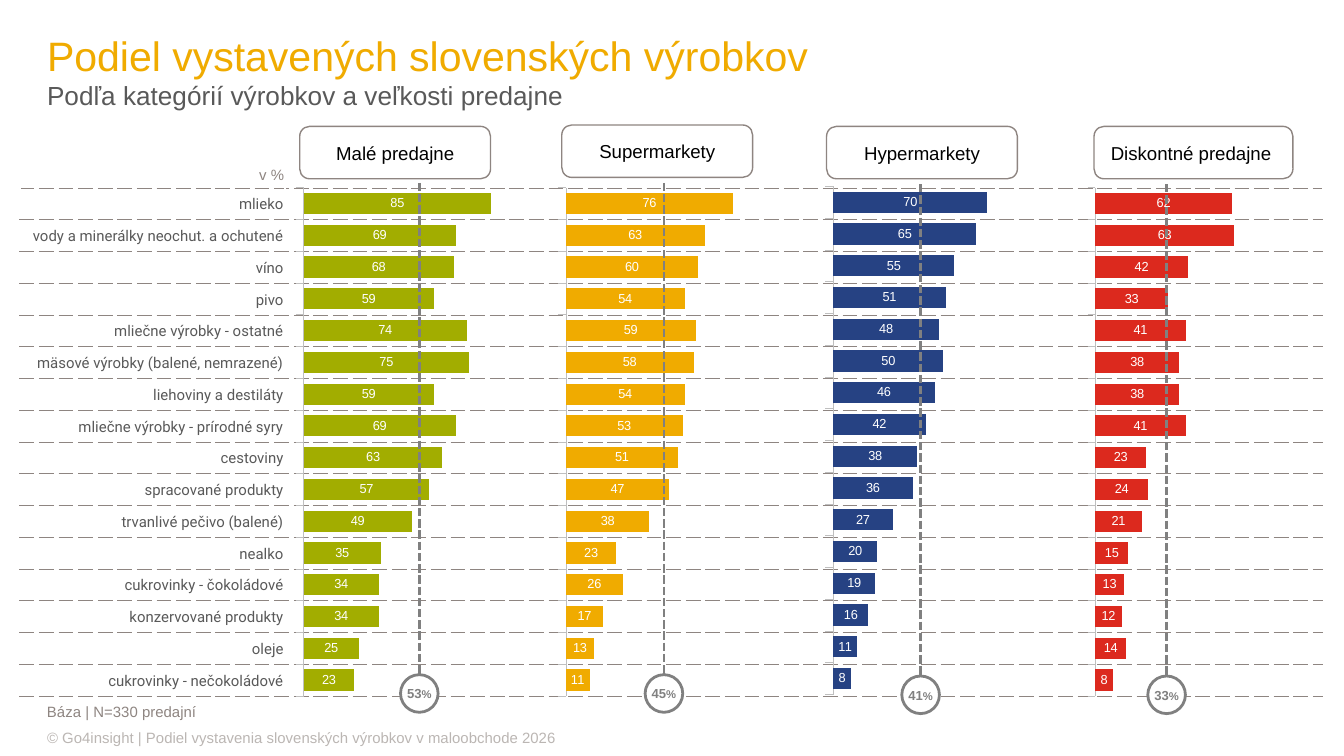
"""Build a slide on the share of Slovak goods on show, by type and shop size."""
import collections

import lxml.etree
import pptx
import pptx.chart.data
import pptx.dml.color
import pptx.enum.chart
import pptx.enum.dml
import pptx.enum.shapes
import pptx.enum.text
import pptx.oxml
import pptx.oxml.ns
import pptx.util

Inches = pptx.util.Inches
Pt = pptx.util.Pt
RGBColor = pptx.dml.color.RGBColor
Align = pptx.enum.text.PP_ALIGN
Anchor = pptx.enum.text.MSO_ANCHOR
Shape = pptx.enum.shapes.MSO_SHAPE
qn = pptx.oxml.ns.qn

WHITE = RGBColor(0xFF, 0xFF, 0xFF)
BLACK = RGBColor(0, 0, 0)
GOLD = RGBColor(0xF0, 0xAB, 0x00)
GREEN = RGBColor(0xA2, 0xAD, 0x00)
BLUE = RGBColor(0x26, 0x42, 0x83)
RED = RGBColor(0xDC, 0x29, 0x1E)
DARK = RGBColor(0x59, 0x59, 0x59)
GRAY = RGBColor(0x80, 0x80, 0x80)
TAUPE = RGBColor(0x8E, 0x85, 0x81)
PALE = RGBColor(0xBB, 0xB6, 0xB3)
SILVER = RGBColor(0xBF, 0xBF, 0xBF)

GOODS = [
    "mlieko", "vody a minerálky neochut. a ochutené", "víno", "pivo",
    "mliečne výrobky - ostatné", "mäsové výrobky (balené, nemrazené)",
    "liehoviny a destiláty", "mliečne výrobky - prírodné syry", "cestoviny",
    "spracované produkty", "trvanlivé pečivo (balené)", "nealko",
    "cukrovinky - čokoládové", "konzervované produkty", "oleje",
    "cukrovinky - nečokoládové",
]

Shop = collections.namedtuple(
    "Shop", "name color head_x head_y head_w bar_x bar_y mean mean_x mean_y vals")
SHOPS = [
    Shop("Malé predajne", GREEN, 2.23, 0.94, 1.42, 2.2, 1.32, 53, 3.12, 1.36,
         [85, 69, 68, 59, 74, 75, 59, 69, 63, 57, 49, 35, 34, 34, 25, 23]),
    Shop("Supermarkety", GOLD, 4.18, 0.93, 1.42, 4.15, 1.32, 45, 4.94, 1.36,
         [76, 63, 60, 54, 59, 58, 54, 53, 51, 47, 38, 23, 26, 17, 13, 11]),
    Shop("Hypermarkety", BLUE, 6.15, 0.94, 1.42, 6.14, 1.31, 41, 6.85, 1.37,
         [70, 65, 55, 51, 48, 50, 46, 42, 38, 36, 27, 20, 19, 16, 11, 8]),
    Shop("Diskontné predajne ", RED, 8.14, 0.94, 1.48, 8.09, 1.32, 33, 8.68, 1.37,
         [62, 63, 42, 33, 41, 38, 38, 41, 23, 24, 21, 15, 13, 12, 14, 8]),
]


def write(frame, text, size=8, color=DARK, font="Arial", bold=False,
          align=Align.LEFT, anchor=Anchor.MIDDLE, pad=(0, 0, 0, 0), wrap=True):
    """Set text and its format in a frame, and return the paragraph."""
    frame.word_wrap = wrap
    frame.vertical_anchor = anchor
    (frame.margin_left, frame.margin_top,
     frame.margin_right, frame.margin_bottom) = map(Inches, pad)
    para = frame.paragraphs[0]
    para.alignment = align
    add_run(para, text, size, color, font, bold)
    return para


def add_run(para, text, size, color, font="Arial", bold=False):
    """Add one run of text to a paragraph."""
    run = para.add_run()
    run.text = text
    run.font.size = Pt(size)
    run.font.name = font
    run.font.bold = bold
    run.font.color.rgb = color


def add_note(slide, box, text, **form):
    """Add a text box."""
    note = slide.shapes.add_textbox(*map(Inches, box))
    return write(note.text_frame, text, **form)


def add_form(slide, kind, box, color, width):
    """Add a white preset shape with an outline."""
    form = slide.shapes.add_shape(kind, *map(Inches, box))
    form.shadow.inherit = False
    form.fill.solid()
    form.fill.fore_color.rgb = WHITE
    form.line.color.rgb = color
    form.line.width = Pt(width)
    return form


def rule_cell(cell):
    """Clear the fill of a cell and dash its top and bottom edges."""
    cell.fill.background()
    props = cell._tc.get_or_add_tcPr()
    for spot, side in enumerate(("lnT", "lnB")):
        props.insert(spot, pptx.oxml.parse_xml(
            f'<a:{side} {pptx.oxml.ns.nsdecls("a")} w="6350"><a:solidFill>'
            f'<a:srgbClr val="{TAUPE}"/></a:solidFill><a:prstDash val="dash"/></a:{side}>'))


def add_grid(slide):
    """Add the table of goods with its dashed rules."""
    box = map(Inches, (0.15, 1.4, 9.69, 3.78))
    grid = slide.shapes.add_table(len(GOODS), 2, *box).table
    grid.first_row = grid.horz_banding = False
    for col, width in zip(grid.columns, (1.97, 7.72)):
        col.width = Inches(width)
    for row, name in enumerate(GOODS):
        label, blank = grid.cell(row, 0), grid.cell(row, 1)
        for cell in (label, blank):
            rule_cell(cell)
            cell.margin_left = cell.margin_top = cell.margin_right = Inches(0.01)
            cell.margin_bottom = 0
            cell.vertical_anchor = Anchor.MIDDLE
        para = label.text_frame.paragraphs[0]
        para.alignment = Align.RIGHT
        add_run(para, name, 8, DARK, "Roboto")
        last = blank.text_frame.paragraphs[0]._p
        lxml.etree.SubElement(last, qn("a:endParaRPr")).set("sz", "800")


def add_head(slide, shop):
    """Add the rounded head above one chart."""
    box = (shop.head_x, shop.head_y, shop.head_w, 0.39)
    head = add_form(slide, Shape.ROUNDED_RECTANGLE, box, TAUPE, 0.75)
    head.adjustments[0] = 0.19
    tint = head._element.spPr.find(qn("a:solidFill"))[0]
    lxml.etree.SubElement(tint, qn("a:alpha")).set("val", "92000")
    write(head.text_frame, shop.name, size=10, color=BLACK,
          align=Align.CENTER, pad=(0.1, 0.05, 0.1, 0.05))


def place_plot(chart):
    """Fix the inner plot area of a chart."""
    area = chart._chartSpace.chart.plotArea
    for old in area.findall(qn("c:layout")):
        area.remove(old)
    marks = (("layoutTarget", "inner"), ("xMode", "edge"), ("yMode", "edge"),
             ("x", 0.01), ("y", 0.02), ("w", 0.99), ("h", 0.98))
    tags = "".join(f'<c:{tag} val="{val}"/>' for tag, val in marks)
    area.insert(0, pptx.oxml.parse_xml(
        f'<c:layout {pptx.oxml.ns.nsdecls("c")}>'
        f'<c:manualLayout>{tags}</c:manualLayout></c:layout>'))


def add_bars(slide, shop):
    """Add the bar chart of one kind of shop."""
    data = pptx.chart.data.CategoryChartData()
    data.categories = [str(num + 1) for num in range(len(GOODS))]
    data.add_series("Series 1", shop.vals)
    box = map(Inches, (shop.bar_x, shop.bar_y, 1.7, 3.86))
    chart = slide.shapes.add_chart(
        pptx.enum.chart.XL_CHART_TYPE.BAR_STACKED, *box, data).chart
    chart.has_legend = chart.has_title = False
    chart.font.size, chart.font.name = Pt(8.9), "Arial"
    chart.font.color.rgb = BLACK
    place_plot(chart)
    side = chart.category_axis
    side.reverse_order = True
    side.tick_label_position = pptx.enum.chart.XL_TICK_LABEL_POSITION.NONE
    side.major_tick_mark = pptx.enum.chart.XL_TICK_MARK.OUTSIDE
    side.tick_labels.font.size = Pt(8)
    side.format.line.color.rgb = SILVER
    side.format.line.width = Pt(0.25)
    scale = chart.value_axis
    scale.minimum_scale, scale.maximum_scale, scale.major_unit = 0, 100, 25
    scale.has_major_gridlines = scale.visible = False
    plot = chart.plots[0]
    plot.gap_width, plot.overlap, plot.vary_by_categories = 50, 100, False
    bars = plot.series[0]
    bars.format.fill.solid()
    bars.format.fill.fore_color.rgb = shop.color
    tags = bars.data_labels
    tags.show_value = True
    tags.number_format, tags.number_format_is_linked = "#,##0", False
    tags.font.size, tags.font.name = Pt(7), "Arial"
    tags.font.color.rgb = WHITE


def add_mean(slide, shop):
    """Add the dashed line and ring that mark the mean."""
    foot = shop.mean_y + 3.67
    ends = map(Inches, (shop.mean_x, shop.mean_y, shop.mean_x, foot))
    line = slide.shapes.add_connector(pptx.enum.shapes.MSO_CONNECTOR.STRAIGHT, *ends)
    line.line.color.rgb = GRAY
    line.line.width = Pt(1.5)
    line.line.dash_style = pptx.enum.dml.MSO_LINE.SQUARE_DOT
    lxml.etree.SubElement(line._element.spPr, qn("a:effectLst"))
    box = (shop.mean_x - 0.14, foot - 0.01, 0.28, 0.28)
    ring = add_form(slide, Shape.OVAL, box, GRAY, 1.5)
    para = write(ring.text_frame, str(shop.mean), size=7, color=GRAY,
                 bold=True, align=Align.CENTER)
    add_run(para, "%", 6, GRAY, bold=True)


def main():
    """Build and save the slide."""
    deck = pptx.Presentation()
    deck.slide_width = Inches(10)
    deck.slide_height = deck.slide_width * 9 // 16
    slide = deck.slides.add_slide(deck.slide_layouts[6])
    add_note(slide, (0.35, 5.41, 7.72, 0.16),
             "© Go4insight | Podiel vystavenia slovenských výrobkov v maloobchode 2026",
             color=PALE)
    add_grid(slide)
    for draw in (add_head, add_bars, add_mean):
        for shop in SHOPS:
            draw(slide, shop)
    add_note(slide, (1.83, 1.18, 0.39, 0.24), "v %", color=TAUPE, wrap=False,
             anchor=Anchor.TOP, pad=(0.1, 0.05, 0.1, 0.05))
    title = add_note(slide, (0.35, 0.21, 7.01, 0.63),
                     "Podiel vystavených slovenských výrobkov", size=22, color=GOLD)
    title.add_line_break()
    add_run(title, "Podľa kategórií výrobkov a veľkosti predajne", 14, DARK)
    add_note(slide, (0.35, 5.21, 9.06, 0.18), "Báza | N=330 predajní",
             color=TAUPE, anchor=Anchor.TOP, pad=(0, 0.02, 0, 0))
    deck.save("out.pptx")


if __name__ == "__main__":
    main()
